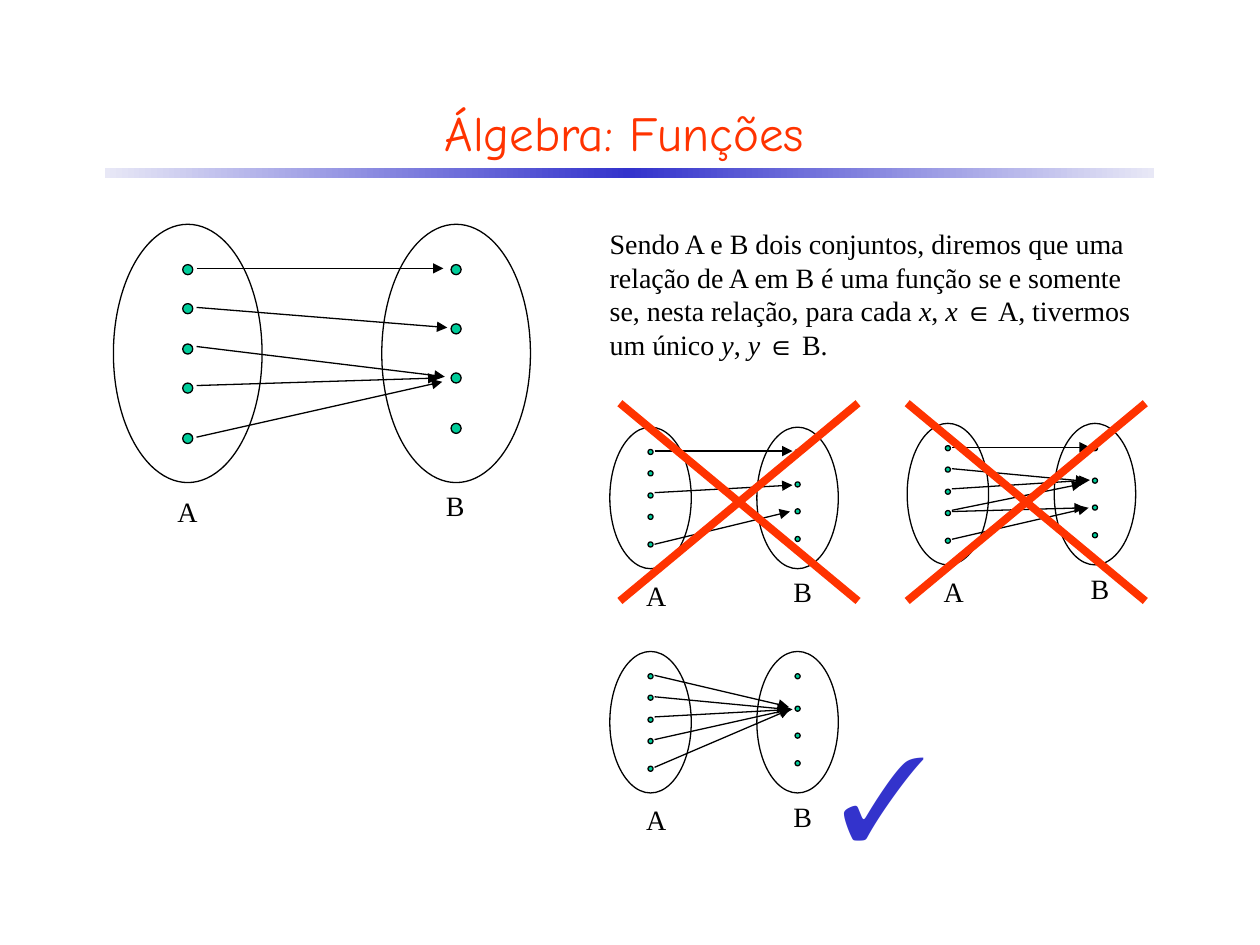
from copy import deepcopy
from dataclasses import dataclass

from lxml import etree
from pptx import Presentation
from pptx.dml.color import RGBColor
from pptx.enum import shapes, text
from pptx.oxml.ns import qn
from pptx.util import Inches, Pt


@dataclass(frozen=True)
class Theme:
    black: str = "000000"
    red: str = "FF3300"
    blue: str = "3333CC"
    pale_blue: str = "E8E8F6"
    green: str = "00CC99"
    title_font: str = "Comic Neue"
    body_font: str = "Times New Roman"
    title_size: float = 28
    body_size: float = 16
    check_size: float = 66
    thin: float = 0.75
    thick: float = 4.5


@dataclass(frozen=True)
class DiagramSize:
    scale: float
    dot: float
    label_inset: float
    arrow_inset: float


LARGE = DiagramSize(scale=1, dot=0.08, label_inset=0.41, arrow_inset=0.66)
SMALL = DiagramSize(scale=0.548, dot=0.04, label_inset=0.19, arrow_inset=0.355)

# Large-size measures: set name, left offset, label offset, label width, dot centres
SET_WIDTH, SET_HEIGHT = 1.18, 2.05
SETS = [
    ("A", 0, 2.1, 0.36, [0.36, 0.67, 0.99, 1.3, 1.7]),
    ("B", 2.13, 2.05, 0.35, [0.36, 0.83, 1.22, 1.62]),
]

# Diagram size, left, top, arrows as (start y, end x, end y)
FUNCTION = (LARGE, 0.9, 1.78, [
    (2.13, 3.52, 2.13), (2.44, 3.55, 2.6), (2.75, 3.53, 2.99),
    (3.06, 3.48, 3), (3.47, 3.51, 3.03)])
MISSING_IMAGES = (SMALL, 4.84, 3.39, [
    (3.58, 6.29, 3.58), (3.91, 6.29, 3.85), (4.32, 6.27, 4.06)])
REPEATED_IMAGES = (SMALL, 7.2, 3.36, [
    (3.55, 8.65, 3.55), (3.88, 8.65, 3.81), (4.28, 8.64, 4.03),
    (3.72, 8.62, 3.82), (4.06, 8.61, 4.03), (4.05, 8.59, 3.84)])
CONSTANT_FUNCTION = (SMALL, 4.84, 5.17, [
    (5.36, 6.26, 5.61), (5.69, 6.29, 5.63), (6.09, 6.27, 5.63),
    (5.53, 6.25, 5.63), (5.87, 6.27, 5.63)])

# Runs of the definition, upright and italic in turn
DEFINITION = [
    "Sendo A e B dois conjuntos, diremos que uma relação de A em B é uma função "
    "se e somente se, nesta relação, para cada ",
    "x", ", ", "x ", "∈ A, tivermos um único ", "y", ", ", "y ", "∈ B.",
]


class SlideBuilder:
    def __init__(self, slide, theme):
        self.slide = slide
        self.theme = theme

    def gradient_bar(self, left, top, width, height):
        bar = self.slide.shapes.add_shape(
            shapes.MSO_SHAPE.RECTANGLE, Inches(left), Inches(top), Inches(width), Inches(height))
        bar.shadow.inherit = False
        bar.line.fill.background()
        bar.fill.gradient()
        bar.fill.gradient_angle = 0
        stop_list = bar._element.spPr.find(qn("a:gradFill")).find(qn("a:gsLst"))
        stop_list.insert(1, deepcopy(stop_list[0]))
        colors = (self.theme.pale_blue, self.theme.blue, self.theme.pale_blue)
        for stop, color, position in zip(bar.fill.gradient_stops, colors, (0, 0.5, 1)):
            stop.color.rgb = RGBColor.from_string(color)
            stop.position = position

    def text_box(self, parent, runs, left, top, width, height, size=None, color=None,
                 font=None, wrap=False):
        """Add one paragraph in which every second run is italic."""
        box = parent.shapes.add_textbox(Inches(left), Inches(top), Inches(width), Inches(height))
        frame = box.text_frame
        frame.word_wrap = wrap
        frame.auto_size = text.MSO_AUTO_SIZE.SHAPE_TO_FIT_TEXT
        for index, words in enumerate(runs):
            run = frame.paragraphs[0].add_run()
            run.text = words
            run.font.name = font or self.theme.body_font
            run.font.size = Pt(size or self.theme.body_size)
            run.font.italic = index % 2 == 1
            run.font.color.rgb = RGBColor.from_string(color or self.theme.black)
        return box

    def title(self, words, left, top, width, height):
        box = self.text_box(self.slide, [words], left, top, width, height,
                            self.theme.title_size, self.theme.red, self.theme.title_font, True)
        box.text_frame.auto_size = text.MSO_AUTO_SIZE.NONE
        box.text_frame.vertical_anchor = text.MSO_ANCHOR.MIDDLE
        box.text_frame.paragraphs[0].alignment = text.PP_ALIGN.CENTER

    def ellipse(self, parent, center_x, center_y, width, height, fill=None):
        shape = parent.shapes.add_shape(
            shapes.MSO_SHAPE.OVAL, Inches(center_x - width / 2), Inches(center_y - height / 2),
            Inches(width), Inches(height))
        shape.shadow.inherit = False
        shape.line.color.rgb = RGBColor.from_string(self.theme.black)
        shape.line.width = Pt(self.theme.thin)
        if fill:
            shape.fill.solid()
            shape.fill.fore_color.rgb = RGBColor.from_string(fill)
        else:
            shape.fill.background()

    def line(self, parent, start, end, color, width, arrow=False):
        connector = parent.shapes.add_connector(
            shapes.MSO_CONNECTOR.STRAIGHT, *(Inches(value) for value in (*start, *end)))
        connector.line.color.rgb = RGBColor.from_string(color)
        connector.line.width = Pt(width)
        properties = connector._element.spPr
        if arrow:
            etree.SubElement(properties.find(qn("a:ln")), qn("a:tailEnd"), type="triangle")
        etree.SubElement(properties, qn("a:effectLst"))

    def mapping(self, size, left, top, arrows):
        """Draw sets A and B with their elements and the arrows between them."""
        group = self.slide.shapes.add_group_shape()
        width, height = SET_WIDTH * size.scale, SET_HEIGHT * size.scale
        for name, offset, label_offset, label_width, dots in SETS:
            set_left = left + offset * size.scale
            center_x = set_left + width / 2
            self.ellipse(group, center_x, top + height / 2, width, height)
            for dot in dots:
                self.ellipse(group, center_x, top + dot * size.scale,
                             size.dot, size.dot, self.theme.green)
            self.text_box(group, [name], set_left + size.label_inset,
                          top + label_offset * size.scale, label_width, 0.37)
        for start_y, end_x, end_y in arrows:
            self.line(group, (left + size.arrow_inset, start_y), (end_x, end_y),
                      self.theme.black, self.theme.thin, arrow=True)

    def cross(self, left, top, width, height):
        group = self.slide.shapes.add_group_shape()
        right, bottom = left + width, top + height
        for start_x, end_x in ((left, right), (right, left)):
            self.line(group, (start_x, top), (end_x, bottom), self.theme.red, self.theme.thick)


def main():
    presentation = Presentation()
    presentation.slide_width, presentation.slide_height = Inches(10), Inches(7.5)
    slide = presentation.slides.add_slide(presentation.slide_layouts[6])
    theme = Theme()
    builder = SlideBuilder(slide, theme)

    builder.gradient_bar(0.83, 1.33, 8.33, 0.08)
    builder.title("Álgebra: Funções", 0.33, 0.67, 9.25, 0.75)
    builder.text_box(slide, DEFINITION, 4.74, 1.75, 4.51, 1.17, wrap=True)
    for diagram in (FUNCTION, MISSING_IMAGES, REPEATED_IMAGES, CONSTANT_FUNCTION):
        builder.mapping(*diagram)
    for left in (4.92, 7.2):
        builder.cross(left, 3.2, 1.89, 1.57)
    builder.text_box(slide, ["✓"], 6.57, 5.7, 0.92, 1.2, theme.check_size, theme.blue)

    presentation.save("out.pptx")


if __name__ == "__main__":
    main()
